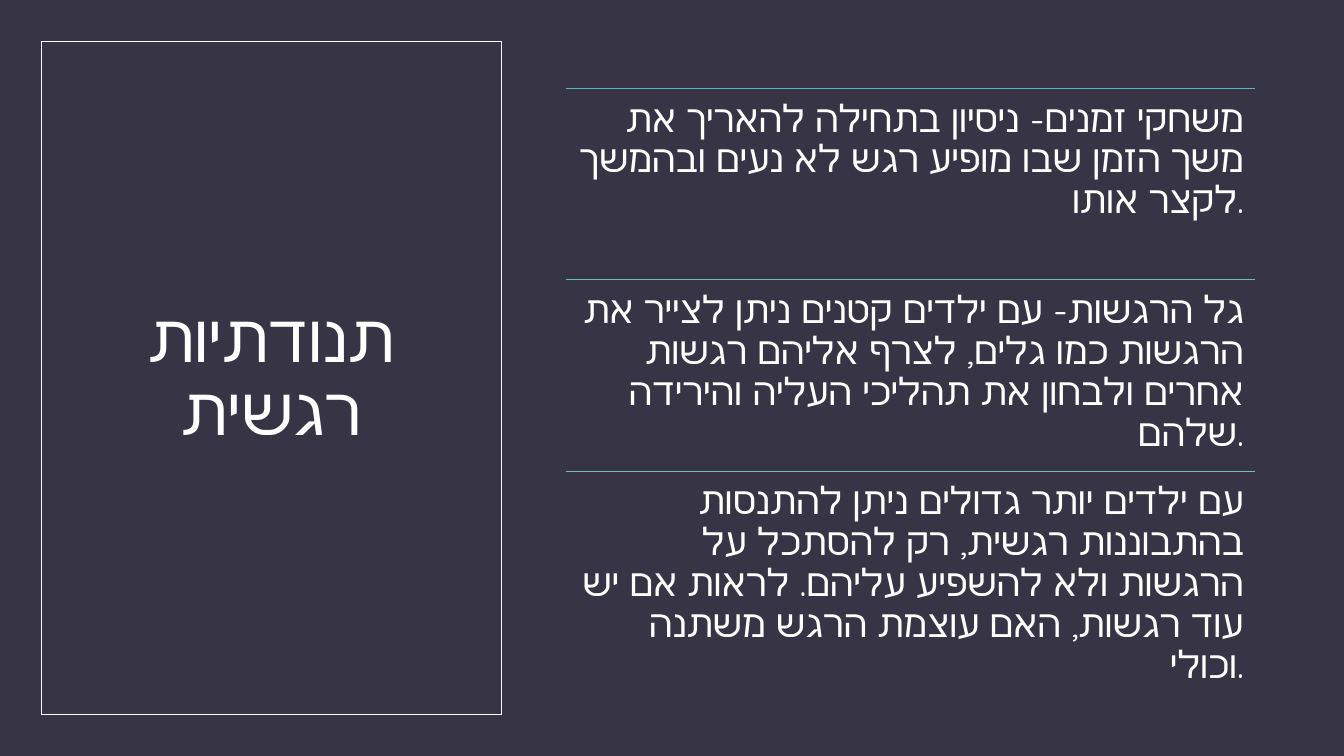
from lxml import etree
from pptx import Presentation
from pptx.dml.color import RGBColor
from pptx.enum import shapes, text
from pptx.oxml import ns
from pptx.util import Pt

TITLE = "תנודתיות רגשית"
SECTIONS = [
    ("rule_top", "משחקי זמנים- ניסיון בתחילה להאריך את משך הזמן שבו מופיע רגש לא נעים "
                 "ובהמשך לקצר אותו."),
    ("rule_middle", "גל הרגשות- עם ילדים קטנים ניתן לצייר את הרגשות כמו גלים, לצרף אליהם "
                    "רגשות אחרים ולבחון את תהליכי העליה והירידה שלהם."),
    ("rule_bottom", "עם ילדים יותר גדולים ניתן להתנסות בהתבוננות רגשית, רק להסתכל על הרגשות "
                    "ולא להשפיע עליהם. לראות אם יש עוד רגשות, האם עוצמת הרגש משתנה וכולי."),
]
COLORS = {
    "background": "373545",
    "white": "FFFFFF",
    "rule_top": "58B6C0",
    "rule_middle": "67BEB5",
    "rule_bottom": "75BDA7",
}
FONT = "Quicksand"
SLIDE_SIZE = (960, 540)
FRAME = (29.5, 29.5, 329, 481)
TITLE_BOX = (45.5, 54, 297, 431)
SECTION_LEFT, SECTION_TOP = 404.5, 63
SECTION_WIDTH, SECTION_HEIGHT = 492, 136.7
SECTION_INSET = 8


def color(name):
    return RGBColor.from_string(COLORS[name])


def format_paragraph(paragraph, size, alignment):
    paragraph.alignment = alignment
    paragraph.line_spacing = 0.9
    paragraph.font.size = Pt(size)
    paragraph.font.name = FONT
    paragraph.font.color.rgb = color("white")
    for run in paragraph.runs:  # Hebrew takes the complex-script font
        properties = run.font._element
        etree.SubElement(properties, ns.qn("a:cs")).set("typeface", FONT)


def add_title(slide):
    title = slide.shapes.title
    title.left, title.top, title.width, title.height = map(Pt, TITLE_BOX)
    frame = title.text_frame
    frame.text = TITLE
    frame.word_wrap = True
    frame.auto_size = text.MSO_AUTO_SIZE.NONE
    frame.vertical_anchor = text.MSO_ANCHOR.MIDDLE
    paragraph = frame.paragraphs[0]
    format_paragraph(paragraph, 48, text.PP_ALIGN.CENTER)
    paragraph._p.get_or_add_pPr().set("rtl", "1")


def add_frame(slide):
    shape = slide.shapes.add_shape(shapes.MSO_SHAPE.RECTANGLE, *map(Pt, FRAME))
    shape.shadow.inherit = False
    shape.fill.background()
    shape.line.color.rgb = color("white")
    shape.line.width = Pt(0.5)


def add_section(slide, top, rule_color, wording):
    """Add a thin rule with a text box hanging below it."""
    rule = slide.shapes.add_connector(
        shapes.MSO_CONNECTOR.STRAIGHT,
        Pt(SECTION_LEFT), Pt(top), Pt(SECTION_LEFT + SECTION_WIDTH), Pt(top))
    rule.line.color.rgb = color(rule_color)
    rule.line.width = Pt(0.5)
    etree.SubElement(rule._element.spPr, ns.qn("a:effectLst"))

    box = slide.shapes.add_textbox(
        Pt(SECTION_LEFT), Pt(top), Pt(SECTION_WIDTH), Pt(SECTION_HEIGHT))
    frame = box.text_frame
    frame.word_wrap = True
    frame.margin_left = frame.margin_right = Pt(SECTION_INSET)
    frame.margin_top = frame.margin_bottom = Pt(SECTION_INSET)
    frame.text = wording
    format_paragraph(frame.paragraphs[0], 27, text.PP_ALIGN.RIGHT)


def main():
    presentation = Presentation()
    presentation.slide_width, presentation.slide_height = map(Pt, SLIDE_SIZE)
    slide = presentation.slides.add_slide(presentation.slide_layouts[5])
    slide.background.fill.solid()
    slide.background.fill.fore_color.rgb = color("background")
    add_title(slide)
    add_frame(slide)
    for index, (rule_color, wording) in enumerate(SECTIONS):
        add_section(slide, SECTION_TOP + index * SECTION_HEIGHT, rule_color, wording)
    presentation.save("out.pptx")


if __name__ == "__main__":
    main()
